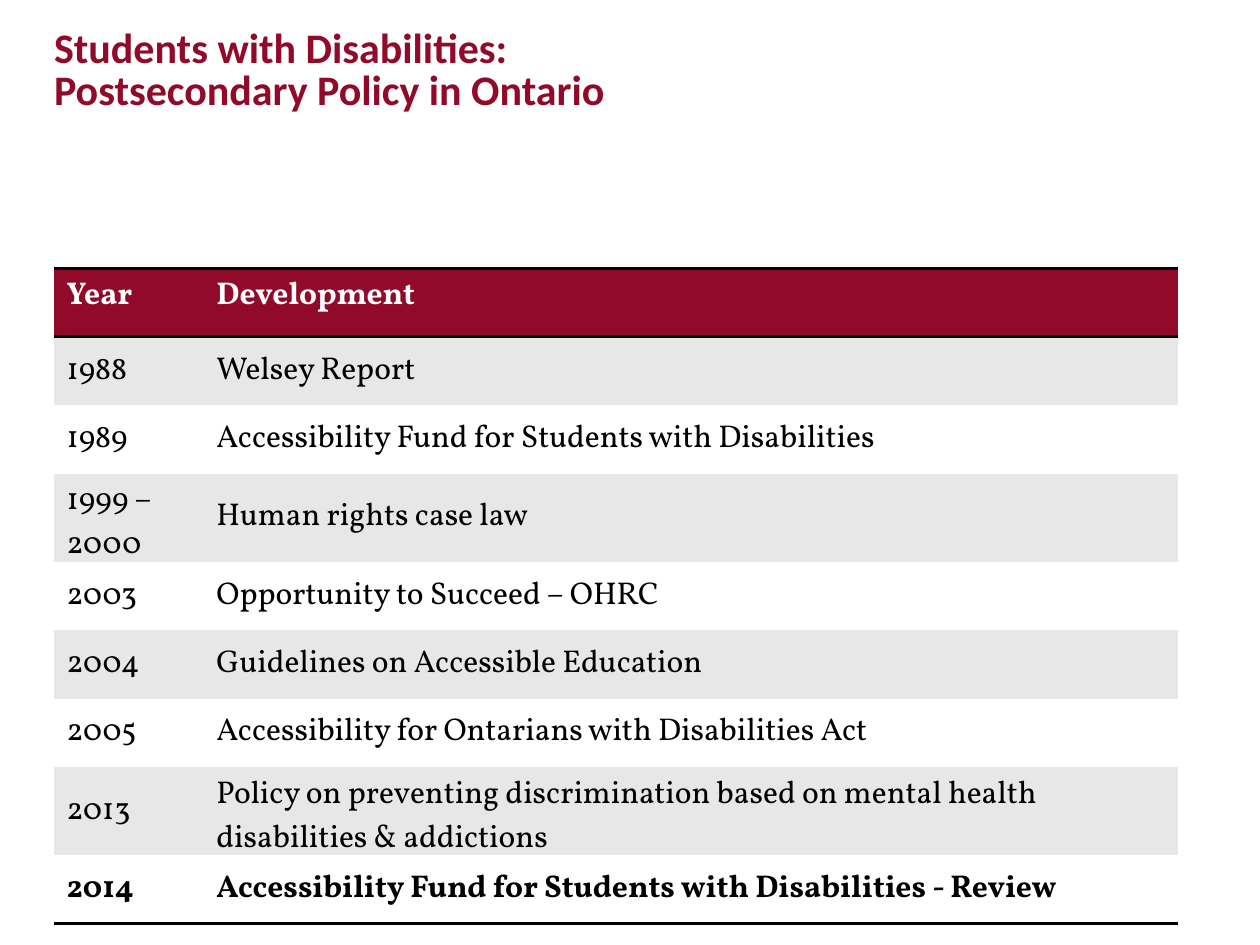
"""Build a slide with a table of Ontario postsecondary disability policy."""
import pptx
import pptx.dml.color
import pptx.enum.text
import pptx.oxml.ns
import pptx.util
from lxml import etree

Cm = pptx.util.Cm
Pt = pptx.util.Pt
ANCHOR = pptx.enum.text.MSO_ANCHOR

TITLE = ["Students with Disabilities:", "Postsecondary Policy in Ontario"]
ROWS = [
    ("Year", "Development"),
    ("1988", "Welsey Report"),
    ("1989", "Accessibility Fund for Students with Disabilities"),
    ("1999 – 2000", "Human rights case law"),
    ("2003", "Opportunity to Succeed – OHRC"),
    ("2004", "Guidelines on Accessible Education"),
    ("2005", "Accessibility for Ontarians with Disabilities Act"),
    ("2013", "Policy on preventing discrimination based on mental health disabilities & addictions"),
    ("2014", "Accessibility Fund for Students with Disabilities - Review"),
]
TALL_ROWS = {3, 7}
COL_WIDTHS = [3.02, 19.63]
ROW_H, TALL_H = 1.38, 1.73
LEFT = 1.09
RED, BLACK, WHITE, GREY = "910A29", "000000", "FFFFFF", "E7E7E7"
NO_STYLE = "{2D5ABB26-0587-4C30-8999-92F81FD0307C}"


def rgb(value):
    return pptx.dml.color.RGBColor.from_string(value)


def add_run(p, text, font, size, color, bold):
    r = p.add_run()
    r.text = text
    r.font.name = font
    r.font.size = Pt(size)
    r.font.bold = bold
    r.font.color.rgb = rgb(color)


def add_border(cell, side):
    qn = pptx.oxml.ns.qn
    tc_pr = cell._tc.get_or_add_tcPr()
    ln = etree.SubElement(tc_pr, qn("a:ln" + side), w=str(Pt(2)))
    fill = etree.SubElement(ln, qn("a:solidFill"))
    etree.SubElement(fill, qn("a:srgbClr"), val=BLACK)


def add_title(s):
    tf = s.shapes.add_textbox(Cm(LEFT), Cm(0.05), Cm(17.02), Cm(2.67)).text_frame
    tf.word_wrap = True
    tf.vertical_anchor = ANCHOR.MIDDLE
    tf.margin_left = tf.margin_bottom = 0
    p = tf.paragraphs[0]
    p.line_spacing = Pt(24)
    for i, line in enumerate(TITLE):
        if i:
            p.add_line_break()
        add_run(p, line, "Calibri", 24, RED, True)


def add_policy_table(s):
    heights = [TALL_H if i in TALL_ROWS else ROW_H for i in range(len(ROWS))]
    frame = s.shapes.add_table(len(ROWS), len(COL_WIDTHS), Cm(LEFT), Cm(5.41),
                               Cm(sum(COL_WIDTHS)), Cm(sum(heights)))
    table = frame.table
    table.horz_banding = False
    table._tbl.tblPr.find(pptx.oxml.ns.qn("a:tableStyleId")).text = NO_STYLE
    for col, width in zip(table.columns, COL_WIDTHS):
        col.width = Cm(width)
    last = len(ROWS) - 1
    for i, (texts, height) in enumerate(zip(ROWS, heights)):
        table.rows[i].height = Cm(height)
        sides = {0: "TB", last: "B"}.get(i, "")
        fill = RED if i == 0 else GREY if i % 2 else WHITE
        for j, text in enumerate(texts):
            cell = table.cell(i, j)
            cell.vertical_anchor = ANCHOR.MIDDLE if i else ANCHOR.TOP
            for side in sides:
                add_border(cell, side)
            cell.fill.solid()
            cell.fill.fore_color.rgb = rgb(fill)
            add_run(cell.text_frame.paragraphs[0], text, "Vollkorn", 18,
                    BLACK if i else WHITE, i in (0, last))


def main():
    prs = pptx.Presentation()
    prs.slide_width, prs.slide_height = Cm(25.4), Cm(19.05)
    s = prs.slides.add_slide(prs.slide_layouts[6])
    add_title(s)
    add_policy_table(s)
    prs.save("out.pptx")


if __name__ == "__main__":
    main()
